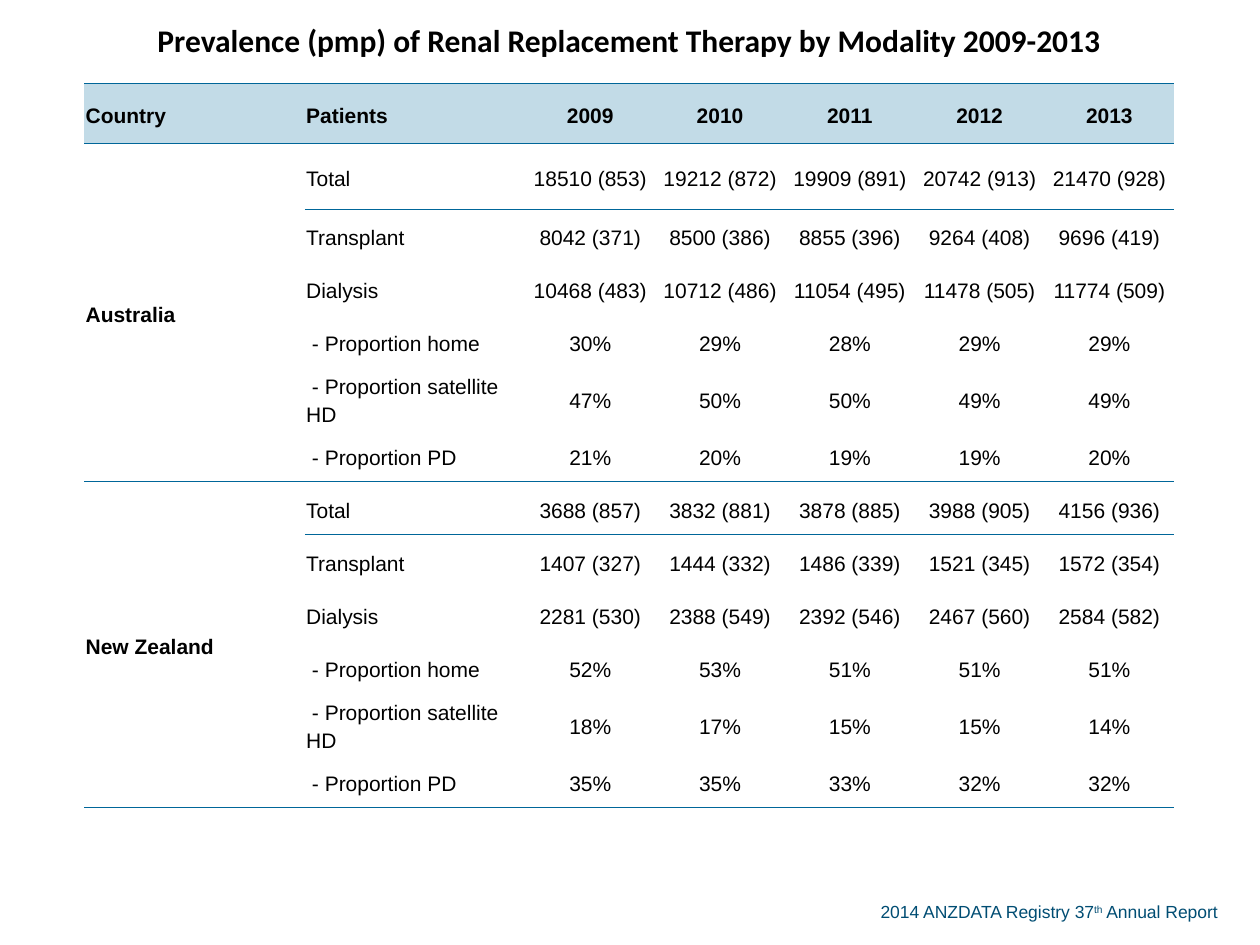
from lxml.etree import SubElement
from pptx import Presentation
from pptx.dml.color import RGBColor
from pptx.enum.text import MSO_ANCHOR, PP_ALIGN
from pptx.oxml.ns import qn
from pptx.util import Inches, Pt

BLACK = RGBColor(0x00, 0x00, 0x00)
HEADER_BLUE = RGBColor(0xC2, 0xDB, 0xE7)
RULE_BLUE = RGBColor(0x00, 0x66, 0x99)
FOOTER_BLUE = RGBColor(0x00, 0x4D, 0x73)
NO_STYLE_NO_GRID = "{2D5ABB26-0587-4C30-8999-92F81FD0307C}"

TITLE = "Prevalence (pmp) of Renal Replacement Therapy by Modality 2009-2013"
HEADER = ["Country", "Patients", "2009", "2010", "2011", "2012", "2013"]
MODALITIES = ["Total", "Transplant", "Dialysis", " - Proportion home",
              " - Proportion satellite HD", " - Proportion PD"]
COUNTRIES = {
    "Australia": [
        ["18510 (853)", "19212 (872)", "19909 (891)", "20742 (913)", "21470 (928)"],
        ["8042 (371)", "8500 (386)", "8855 (396)", "9264 (408)", "9696 (419)"],
        ["10468 (483)", "10712 (486)", "11054 (495)", "11478 (505)", "11774 (509)"],
        ["30%", "29%", "28%", "29%", "29%"],
        ["47%", "50%", "50%", "49%", "49%"],
        ["21%", "20%", "19%", "19%", "20%"],
    ],
    "New Zealand": [
        ["3688 (857)", "3832 (881)", "3878 (885)", "3988 (905)", "4156 (936)"],
        ["1407 (327)", "1444 (332)", "1486 (339)", "1521 (345)", "1572 (354)"],
        ["2281 (530)", "2388 (549)", "2392 (546)", "2467 (560)", "2584 (582)"],
        ["52%", "53%", "51%", "51%", "51%"],
        ["18%", "17%", "15%", "15%", "14%"],
        ["35%", "35%", "33%", "32%", "32%"],
    ],
}
COL_WIDTHS = [1.75] * 2 + [1.03] * 5
ROW_HEIGHTS = [0.66, 0.48, 0.52] + [0.42] * 11


def add_border(cell, side):
    ln = SubElement(cell._tc.get_or_add_tcPr(), qn(f"a:{side}"), w=str(Pt(0.5)))
    fill = SubElement(ln, qn("a:solidFill"))
    SubElement(fill, qn("a:srgbClr"), val=str(RULE_BLUE))


def format_cell(cell, bold, centred):
    cell.vertical_anchor = MSO_ANCHOR.MIDDLE
    cell.margin_left = cell.margin_right = cell.margin_top = Inches(0.01)
    cell.margin_bottom = 0
    p = cell.text_frame.paragraphs[0]
    p.alignment = PP_ALIGN.CENTER if centred else PP_ALIGN.LEFT
    p.line_spacing = 1.19
    p.space_after = Pt(14)
    p.font.size = Pt(12)
    for r in p.runs:
        r.font.name = "Arial"
        r.font.size = Pt(12)
        r.font.bold = bold
        r.font.color.rgb = BLACK


def format_title(cell):
    p = cell.text_frame.paragraphs[0]
    p.line_spacing = 1.0
    p.space_after = Pt(0)
    p.runs[0].font.name = "Calibri"
    p.runs[0].font.size = Pt(18)


def add_prevalence_table(slide, left, top, width, height):
    rows = [[TITLE] + [""] * 6, HEADER]
    for country, figures in COUNTRIES.items():
        for i, (modality, values) in enumerate(zip(MODALITIES, figures)):
            rows.append([country if i == 0 else "", modality] + values)

    table = slide.shapes.add_table(len(rows), len(HEADER), left, top, width, height).table
    table.first_row = table.horz_banding = False
    table._tbl.tblPr.find(qn("a:tableStyleId")).text = NO_STYLE_NO_GRID
    for col, w in zip(table.columns, COL_WIDTHS):
        col.width = Inches(w)
    for row, h in zip(table.rows, ROW_HEIGHTS):
        row.height = Inches(h)

    # Title row, header row, then one block of rows per country
    n = len(MODALITIES)
    block_starts = [2 + n * i for i in range(len(COUNTRIES))]
    ruled_below = {0, 1} | {start + n - 1 for start in block_starts}
    for i, texts in enumerate(rows):
        for j, text in enumerate(texts):
            cell = table.cell(i, j)
            cell.text = text
            format_cell(cell, bold=i < 2 or j == 0, centred=i == 0 or j > 1)
            if i - 1 in ruled_below:
                add_border(cell, "lnT")
            if i in ruled_below:
                add_border(cell, "lnB")
            if i == 1:
                cell.fill.solid()
                cell.fill.fore_color.rgb = HEADER_BLUE
            else:
                cell.fill.background()
    format_title(table.cell(0, 0))

    # Spans
    table.cell(0, 0).merge(table.cell(0, len(HEADER) - 1))
    for start in block_starts:
        table.cell(start, 0).merge(table.cell(start + n - 1, 0))
        add_span_rule(table.cell(start, 0))


def add_span_rule(cell):
    """Rule under a country cell that spans its block."""
    add_border(cell, "lnB")
    tc_pr = cell._tc.tcPr
    tc_pr.append(tc_pr.find(qn("a:noFill")))


def add_footer(slide, left, top, width, height):
    tf = slide.shapes.add_textbox(left, top, width, height).text_frame
    tf.word_wrap = True
    p = tf.paragraphs[0]
    for text in ("2014 ANZDATA Registry 37", "th", " Annual Report"):
        r = p.add_run()
        r.text = text
        r.font.name = "Arial"
        r.font.size = Pt(10)
        r.font.color.rgb = FOOTER_BLUE
    p.runs[1].font._element.set("baseline", "30000")


def main():
    prs = Presentation()
    prs.slide_width, prs.slide_height = Inches(10), Inches(7.5)
    s = prs.slides.add_slide(prs.slide_layouts[6])
    add_footer(s, Inches(6.89), Inches(7.1), Inches(2.99), Inches(0.27))
    add_prevalence_table(s, Inches(0.67), Inches(0), Inches(8.66), Inches(6.39))
    prs.save("out.pptx")


if __name__ == "__main__":
    main()
